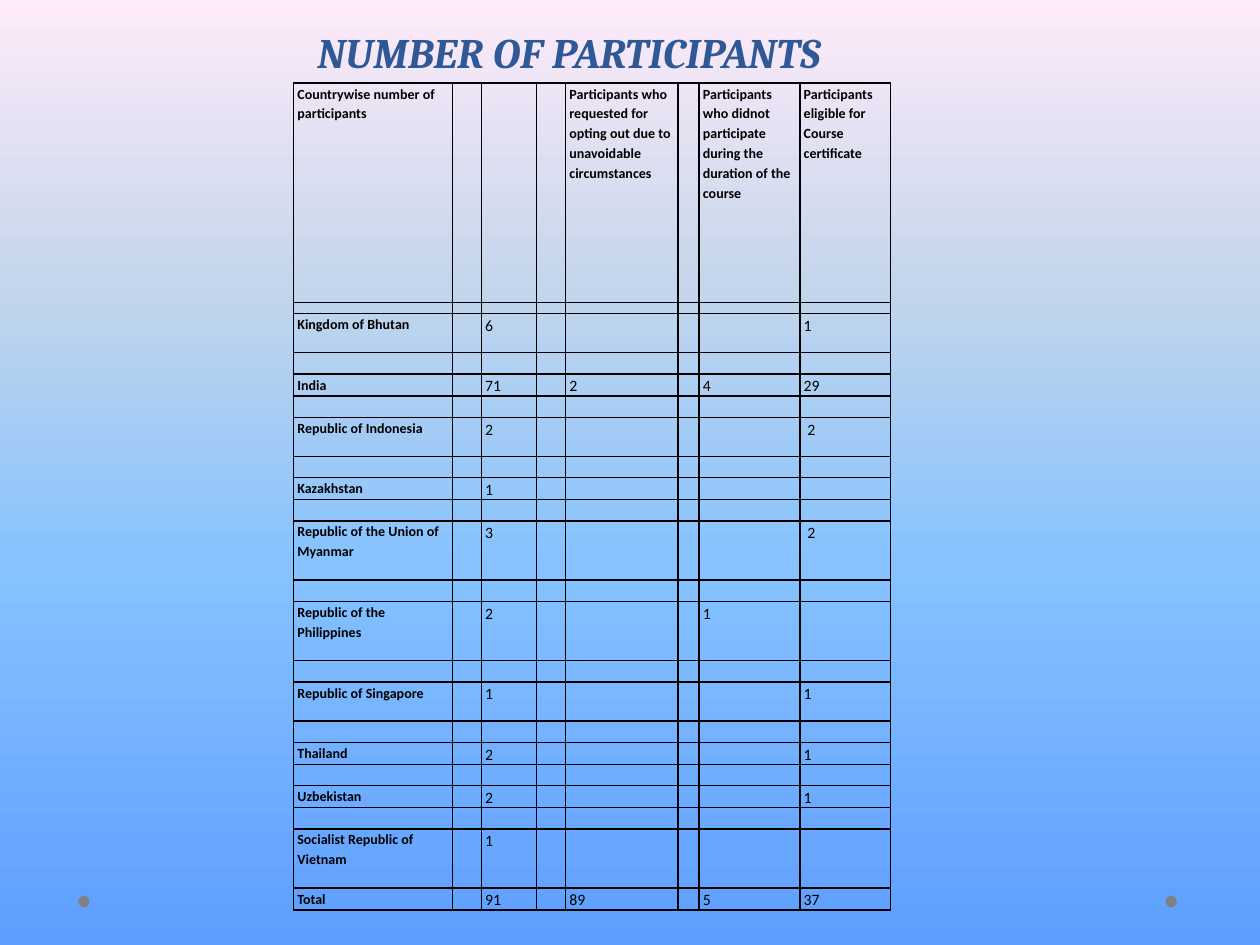
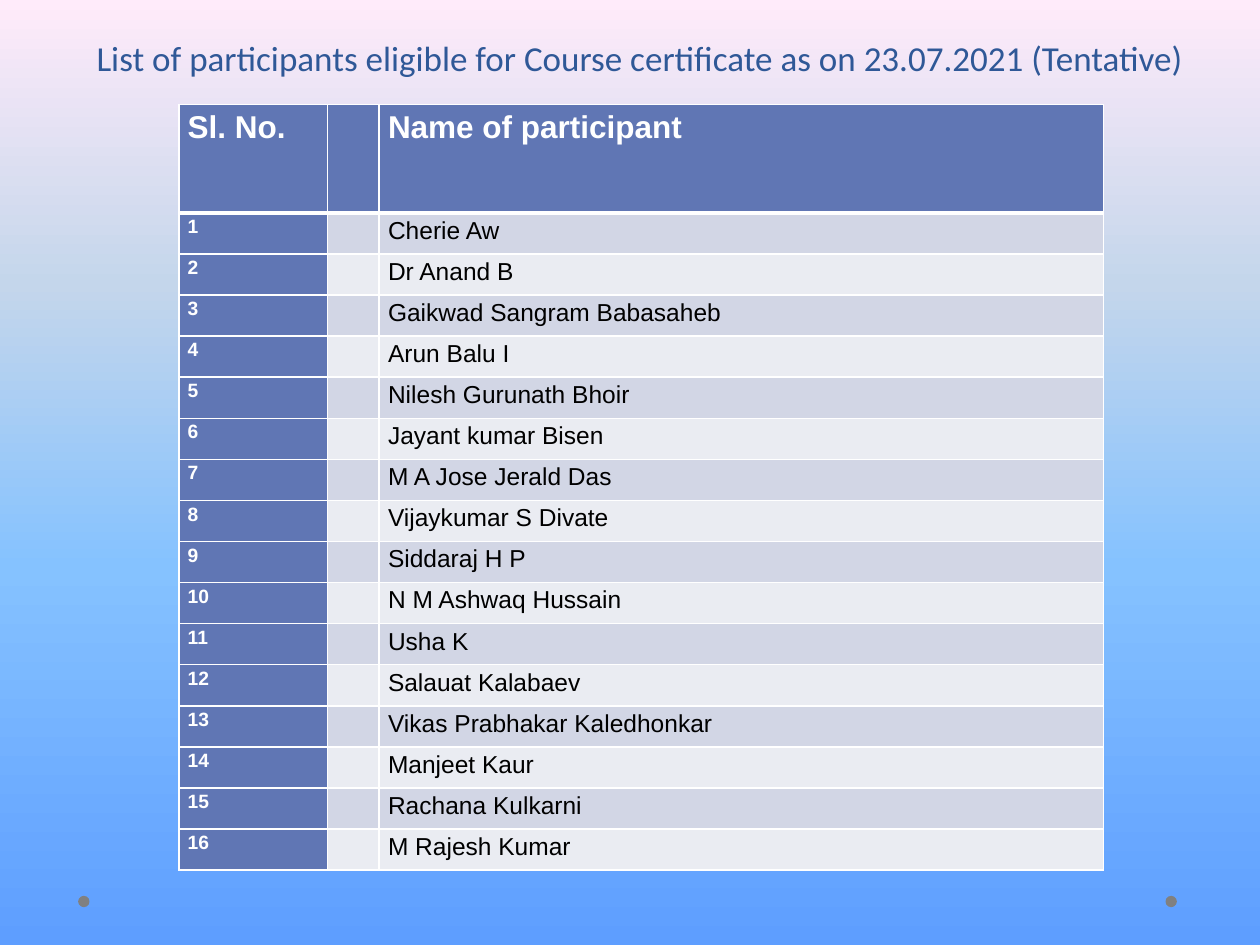
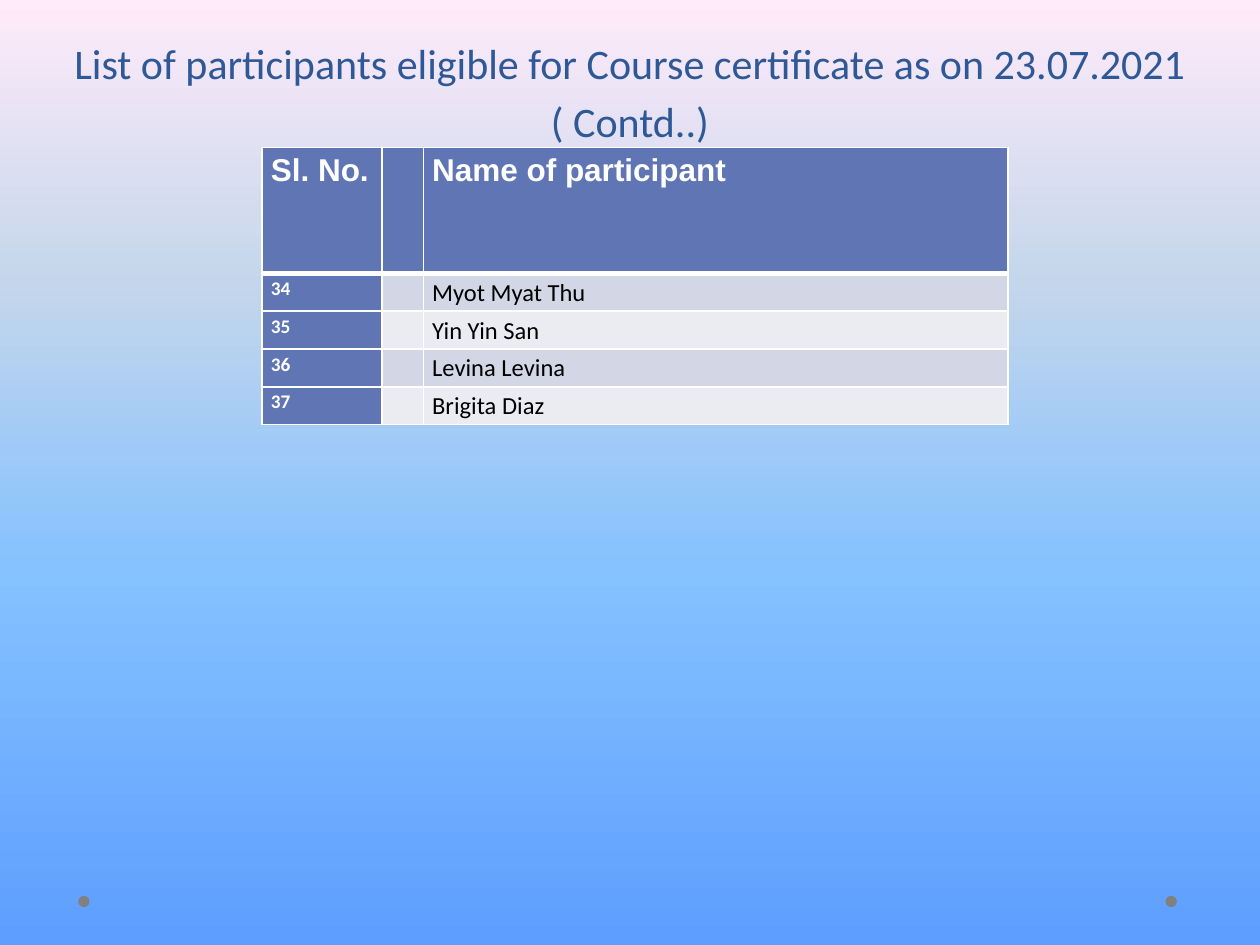
from dataclasses import dataclass

from lxml import etree
from pptx import Presentation
from pptx.dml.color import RGBColor
from pptx.enum.shapes import MSO_SHAPE as Shape
from pptx.enum.text import MSO_ANCHOR as Anchor, PP_ALIGN as Align
from pptx.oxml.ns import qn
from pptx.util import Inches, Pt


@dataclass(frozen=True)
class Theme:
    background: tuple = ((0, "5E9EFF"), (40, "85C2FF"), (70, "C4D6EB"), (100, "FFEBFA"))
    title: str = "2F5897"
    dot: str = "808080"
    ink: str = "000000"
    white: str = "FFFFFF"
    accent: str = "6076B4"
    bands: tuple = ("D2D6E5", "EAECF2")
    title_size: int = 24
    long_title_size: int = 20
    list_header_size: int = 18
    name_size: int = 14
    serial_size: int = 11
    count_size: int = 9
    label_size: int = 8
    divider_size: int = 5
    line_spacing: float = 1.15
    space_after: int = 10
    plain_table: str = "{2D5ABB26-0587-4C30-8999-92F81FD0307C}"


THEME = Theme()

COUNT_COLUMNS = (1.26, 0.23, 0.44, 0.23, 0.89, 0.17, 0.8, 0.72)
COUNT_HEADER = (
    "Countrywise number of participants", "", "", "",
    "Participants who requested for opting out due to unavoidable circumstances", "",
    "Participants who didnot participate during the duration of the course",
    "Participants eligible for Course certificate",
)
ONE_LINE, TWO_LINES, THREE_LINES = 0.17, 0.31, 0.47
# Row height, country, participants, opted out, did not participate, eligible
COUNTRIES = (
    (TWO_LINES, "Kingdom of Bhutan", "6", "", "", "1"),
    (ONE_LINE, "India ", "71", "2", "4", "29"),
    (TWO_LINES, "Republic of Indonesia ", "2", "", "", " 2"),
    (ONE_LINE, "Kazakhstan", "1", "", "", ""),
    (THREE_LINES, "Republic of the Union of Myanmar", "3", "", "", " 2"),
    (THREE_LINES, "Republic of the Philippines", "2", "", "1", ""),
    (TWO_LINES, "Republic of Singapore", "1", "", "", "1"),
    (ONE_LINE, "Thailand", "2", "", "", "1"),
    (ONE_LINE, "Uzbekistan ", "2", "", "", "1"),
    (THREE_LINES, "Socialist Republic of Vietnam", "1", "", "", ""),
)
TOTAL = (ONE_LINE, "Total", "91", "89", "5", "37")

FIRST_NAMES = (
    "Cherie Aw", "Dr Anand B", "Gaikwad Sangram Babasaheb", "Arun Balu I",
    "Nilesh Gurunath Bhoir", "Jayant kumar Bisen", "M A Jose Jerald Das",
    "Vijaykumar S Divate", "Siddaraj H P", "N M Ashwaq Hussain", "Usha K",
    "Salauat Kalabaev", "Vikas Prabhakar Kaledhonkar", "Manjeet Kaur",
    "Rachana Kulkarni", "M Rajesh Kumar",
)
LAST_NAMES = ("Myot Myat Thu", "Yin Yin San", "Levina Levina", "Brigita Diaz")


def color(value):
    return RGBColor.from_string(value)


def style_paragraph(paragraph, size, name, ink, bold=False, italic=False):
    font = paragraph.font
    font.size, font.name, font.bold, font.italic = Pt(size), name, bold, italic
    font.color.rgb = color(ink)
    paragraph.line_spacing = THEME.line_spacing
    paragraph.space_after = Pt(THEME.space_after)


def paint_background(master):
    fill = master.background.fill
    fill.gradient()
    fill.gradient_angle = 90
    stops = master.element.find(".//" + qn("a:gsLst"))
    for stop in list(stops):
        stops.remove(stop)
    for position, value in THEME.background:
        stop = etree.SubElement(stops, qn("a:gs"), pos=str(position * 1000))
        etree.SubElement(stop, qn("a:srgbClr"), val=value)


def add_footer_dots(slide):
    for left in (9.25, 0.62):
        dot = slide.shapes.add_shape(
            Shape.OVAL, Inches(left), Inches(7.11), Inches(0.09), Inches(0.09))
        dot.shadow.inherit = False
        dot.fill.solid()
        dot.fill.fore_color.rgb = color(THEME.dot)
        dot.line.fill.background()


def add_title(slide, box, text, size, name="Calibri", emphasis=False, bottom_inset=0.05):
    """Add a bottom-anchored title and return its paragraph."""
    frame = slide.shapes.add_textbox(*map(Inches, box)).text_frame
    frame.word_wrap = True
    frame.vertical_anchor = Anchor.BOTTOM
    frame.margin_top = 0
    frame.margin_bottom = Inches(bottom_inset)
    paragraph = frame.paragraphs[0]
    paragraph.text = text
    style_paragraph(paragraph, size, name, THEME.title, emphasis, emphasis)
    return paragraph


def add_plain_table(slide, left, top, columns, rows):
    shape = slide.shapes.add_table(
        len(rows), len(columns), Inches(left), Inches(top),
        Inches(sum(columns)), Inches(sum(rows)))
    table = shape.table
    table.first_row = table.horz_banding = False
    shape.element.find(".//" + qn("a:tableStyleId")).text = THEME.plain_table
    for column, width in zip(table.columns, columns):
        column.width = Inches(width)
    for row, height in zip(table.rows, rows):
        row.height = Inches(height)
    return table


def set_borders(cell, value, bottom=1):
    properties = cell._tc.get_or_add_tcPr()
    for index, (side, width) in enumerate((("L", 1), ("R", 1), ("T", 1), ("B", bottom))):
        line = etree.Element(qn(f"a:ln{side}"), w=str(Pt(width)))
        fill = etree.SubElement(line, qn("a:solidFill"))
        etree.SubElement(fill, qn("a:srgbClr"), val=value)
        properties.insert(index, line)


def fill_cell(cell, text, inset, size, name, ink, bold, fill=None):
    cell.margin_left = cell.margin_right = Inches(inset)
    cell.margin_top = cell.margin_bottom = 0
    if fill:
        cell.fill.solid()
        cell.fill.fore_color.rgb = color(fill)
    else:
        cell.fill.background()
    paragraph = cell.text_frame.paragraphs[0]
    style_paragraph(paragraph, size, name, ink, bold)
    if text:
        paragraph.text = text
    else:
        # An empty cell takes its line height from the end-of-paragraph mark.
        etree.SubElement(paragraph._p, qn("a:endParaRPr"), sz=str(size * 100))


def count_row(country, participants, opted_out, absent, eligible):
    return (country, "", participants, "", opted_out, "", absent, eligible)


def add_count_table(slide, left, top):
    blank = ("",) * len(COUNT_COLUMNS)
    rows = [(1.74, COUNT_HEADER), (0.09, blank)]
    for height, *values in COUNTRIES:
        rows += [(height, count_row(*values)), (ONE_LINE, blank)]
    rows[-1] = (TOTAL[0], count_row(*TOTAL[1:]))
    table = add_plain_table(slide, left, top, COUNT_COLUMNS, [height for height, _ in rows])
    for row_index, (height, texts) in enumerate(rows):
        for column_index, text in enumerate(texts):
            label = bool(text) and (row_index == 0 or column_index == 0)
            size = THEME.label_size if label else THEME.count_size
            if height < ONE_LINE:
                size = THEME.divider_size
            cell = table.cell(row_index, column_index)
            fill_cell(cell, text, 0.03, size, "Calibri", THEME.ink, label)
            set_borders(cell, THEME.ink)


def add_name_table(slide, box, columns, header_height, first_number, names, body_font):
    left, top, _, height = box
    row_height = (height - header_height) / len(names)
    rows = [header_height] + [row_height] * len(names)
    table = add_plain_table(slide, left, top, columns, rows)
    for column_index, text in enumerate(("Sl. No.", "", "Name of participant")):
        cell = table.cell(0, column_index)
        fill_cell(cell, text, 0.07, THEME.list_header_size, "Arial",
                  THEME.white, True, THEME.accent)
        set_borders(cell, THEME.white, bottom=3)
    for index, name in enumerate(names):
        band = THEME.bands[index % 2]
        entries = (
            (str(first_number + index), THEME.serial_size, THEME.white, True, THEME.accent),
            ("", THEME.serial_size, THEME.ink, False, band),
            (name, THEME.name_size, THEME.ink, False, band),
        )
        for column_index, (text, size, ink, bold, fill) in enumerate(entries):
            cell = table.cell(index + 1, column_index)
            fill_cell(cell, text, 0.07, size, body_font, ink, bold, fill)
            set_borders(cell, THEME.white)
            if index == 0:
                cell._tc.tcPr.find(qn("a:lnT")).set("w", str(Pt(3)))


def add_slide(presentation):
    slide = presentation.slides.add_slide(presentation.slide_layouts[6])
    add_footer_dots(slide)
    return slide


def add_count_slide(presentation):
    slide = add_slide(presentation)
    title = add_title(slide, (2.42, 0.16, 6.29, 0.5), "NUMBER OF PARTICIPANTS",
                      THEME.title_size, "Cambria", emphasis=True)
    title.line_spacing = Pt(58)
    title.space_after = 0
    add_count_table(slide, 2.33, 0.66)


def add_name_slide(presentation, title_box, title, title_size, bottom_inset, **table):
    slide = add_slide(presentation)
    paragraph = add_title(slide, title_box, title, title_size, bottom_inset=bottom_inset)
    paragraph.alignment = Align.CENTER
    paragraph.space_after = 0
    add_name_table(slide, **table)


def main():
    presentation = Presentation()
    presentation.slide_width, presentation.slide_height = Inches(10), Inches(7.5)
    paint_background(presentation.slide_master)
    add_count_slide(presentation)
    heading = "List of participants eligible for Course certificate as on 23.07.2021"
    add_name_slide(
        presentation, (0.33, 0.42, 9.5, 0.58), heading + " (Tentative)",
        THEME.long_title_size, 0.38,
        box=(1.42, 0.83, 7.33, 6.08), columns=(1.18, 0.41, 5.75), header_height=0.86,
        first_number=1, names=FIRST_NAMES, body_font="Arial")
    add_name_slide(
        presentation, (0.25, 1, 9.5, 0.58), heading + "\n( Contd..)",
        THEME.title_size, 0.42,
        box=(2.08, 1.17, 5.92, 2.2), columns=(0.95, 0.33, 4.64), header_height=1,
        first_number=34, names=LAST_NAMES, body_font="Calibri")
    presentation.save("out.pptx")


if __name__ == "__main__":
    main()
